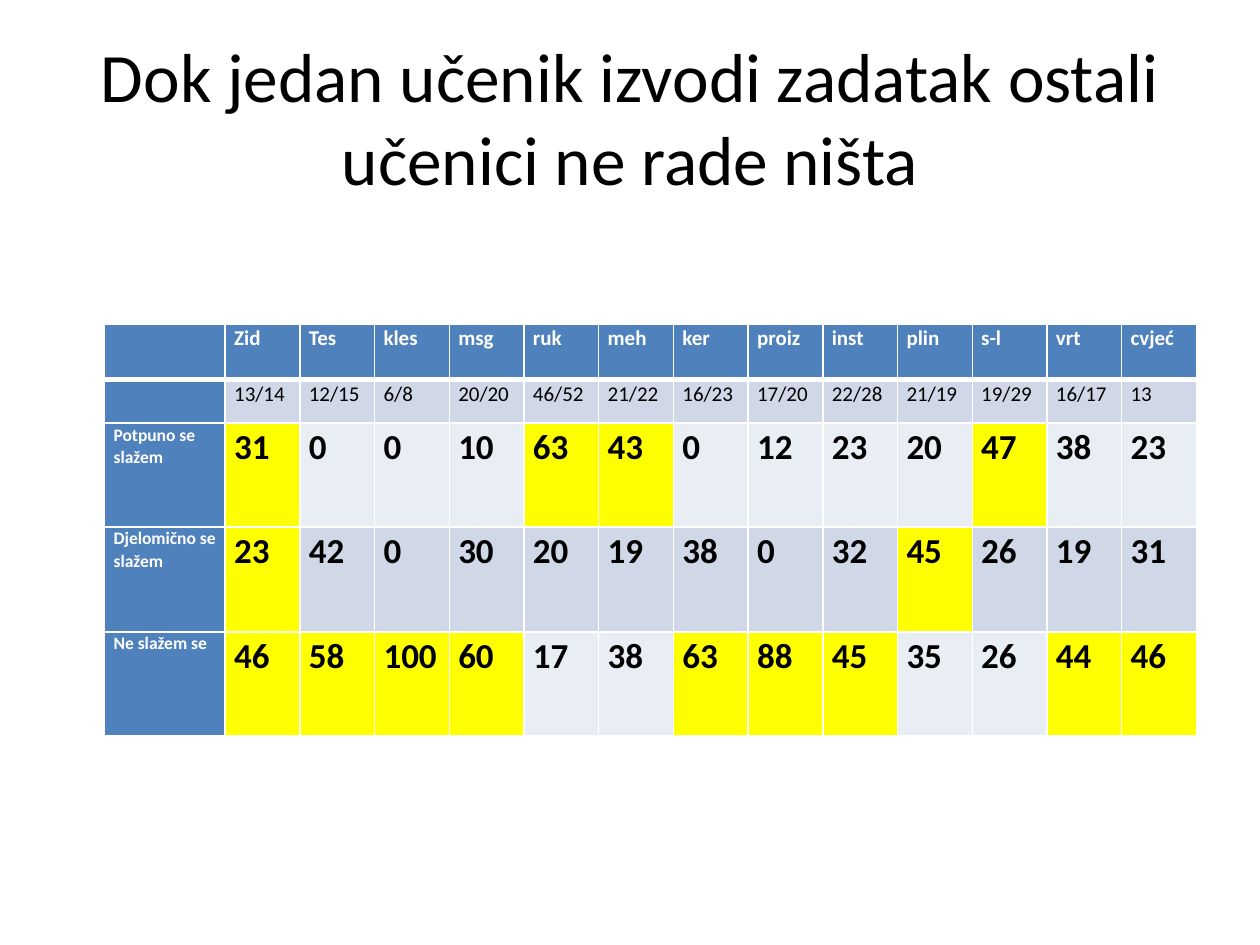
from lxml import etree
from pptx import Presentation
from pptx.dml.color import RGBColor
from pptx.enum.text import MSO_ANCHOR, MSO_AUTO_SIZE, PP_ALIGN
from pptx.oxml.ns import qn
from pptx.util import Cm, Pt

CENTER, MIDDLE, NO_AUTOFIT = PP_ALIGN.CENTER, MSO_ANCHOR.MIDDLE, MSO_AUTO_SIZE.NONE

TITLE = "Dok jedan učenik izvodi zadatak ostali učenici ne rade ništa"
TRADES = ["Zid", "Tes", "kles", "msg", "ruk", "meh", "ker",
          "proiz", "inst", "plin", "s-l", "vrt", "cvjeć"]
COUNTS = ["13/14", "12/15", "6/8", "20/20", "46/52", "21/22", "16/23",
          "17/20", "22/28", "21/19", "19/29", "16/17", "13"]
ANSWERS = [
    ("Potpuno se slažem", [31, 0, 0, 10, 63, 43, 0, 12, 23, 20, 47, 38, 23],
     ["Zid", "ruk", "meh", "s-l"]),
    ("Djelomično se slažem", [23, 42, 0, 30, 20, 19, 38, 0, 32, 45, 26, 19, 31],
     ["Zid", "plin"]),
    ("Ne slažem se", [46, 58, 100, 60, 17, 38, 63, 88, 45, 35, 26, 44, 46],
     ["Zid", "Tes", "kles", "msg", "ker", "proiz", "inst", "vrt", "cvjeć"]),
]

THEME = {
    "font": "Calibri",
    "head_fill": "4F81BD",
    "bands": ["D0D8E8", "E9EDF4"],
    "highlight": "FFFF00",
    "border": "FFFFFF",
    "title": {"size": 39.6, "color": "000000", "bold": False},
    "header": {"size": 12, "color": "FFFFFF", "bold": True},
    "count": {"size": 12, "color": "000000", "bold": False},
    "label": {"size": 10, "color": "FFFFFF", "bold": True},
    "value": {"size": 20, "color": "000000", "bold": True},
}
TITLE_BOX = {"left": Cm(1.27), "top": Cm(0.76), "width": Cm(22.86), "height": Cm(3.18)}
TABLE_LEFT, TABLE_TOP, TABLE_WIDTH, LABEL_WIDTH = 2.11, 6.53, 22.02, 2.43
ROW_HEIGHTS = [1.12, 0.88, 2.09, 2.12, 2.09]
CELL_FORMAT = {"margin_left": Cm(0.18), "margin_right": Cm(0.18),
               "margin_top": 0, "margin_bottom": 0}


def apply_format(target, values):
    """Set every attribute named in values on target."""
    for name, value in values.items():
        setattr(target, name, value)


def write_text(paragraph, text, style):
    """Add one run of text in a theme style."""
    run = paragraph.add_run()
    run.text = text
    apply_format(run.font, {"name": THEME["font"], "size": Pt(style["size"]),
                            "bold": style["bold"]})
    run.font.color.rgb = RGBColor.from_string(style["color"])


def add_borders(cell, widths):
    """Draw the four cell borders with widths in points."""
    properties = cell._tc.get_or_add_tcPr()
    for side, width in widths.items():
        line = etree.SubElement(properties, qn(f"a:ln{side}"), w=str(Pt(width)))
        fill = etree.SubElement(line, qn("a:solidFill"))
        etree.SubElement(fill, qn("a:srgbClr"), val=THEME["border"])


def table_rows():
    """Return the rows as lists of text, style name and fill colour."""
    head, bands = THEME["head_fill"], THEME["bands"]
    rows = [[(text, "header", head) for text in ["", *TRADES]],
            [("", "label", head)] + [(text, "count", bands[0]) for text in COUNTS]]
    for index, (label, values, marked) in enumerate(ANSWERS):
        band = bands[(index + 1) % 2]
        rows.append([(label, "label", head)] + [
            (str(value), "value", THEME["highlight"] if trade in marked else band)
            for trade, value in zip(TRADES, values)])
    return rows


def add_title(slide):
    """Place and format the title."""
    title = slide.shapes.title
    apply_format(title, TITLE_BOX)
    apply_format(title.text_frame, {"word_wrap": True, "auto_size": NO_AUTOFIT,
                                    "vertical_anchor": MIDDLE})
    paragraph = title.text_frame.paragraphs[0]
    paragraph.alignment = CENTER
    write_text(paragraph, TITLE, THEME["title"])


def add_answer_table(slide):
    """Build the table of answers by trade."""
    rows = table_rows()
    table = slide.shapes.add_table(
        len(rows), len(rows[0]), Cm(TABLE_LEFT), Cm(TABLE_TOP),
        Cm(TABLE_WIDTH), Cm(sum(ROW_HEIGHTS))).table
    value_width = (TABLE_WIDTH - LABEL_WIDTH) / len(TRADES)
    for index, column in enumerate(table.columns):
        column.width = Cm(value_width if index else LABEL_WIDTH)
    for row_index, row in enumerate(rows):
        table.rows[row_index].height = Cm(ROW_HEIGHTS[row_index])
        borders = {"L": 1, "R": 1, "T": 3 if row_index == 1 else 1,
                   "B": 3 if row_index == 0 else 1}
        for column_index, (text, style, fill) in enumerate(row):
            cell = table.cell(row_index, column_index)
            apply_format(cell, CELL_FORMAT)
            add_borders(cell, borders)
            cell.fill.solid()
            cell.fill.fore_color.rgb = RGBColor.from_string(fill)
            if text:
                paragraph = cell.text_frame.paragraphs[0]
                paragraph.line_spacing = 1.07
                write_text(paragraph, text, THEME[style])


def main():
    """Build and save the slide."""
    presentation = Presentation()
    apply_format(presentation, {"slide_width": Cm(25.4), "slide_height": Cm(19.05)})
    slide = presentation.slides.add_slide(presentation.slide_layouts.get_by_name("Title Only"))
    add_title(slide)
    add_answer_table(slide)
    presentation.save("out.pptx")


if __name__ == "__main__":
    main()
